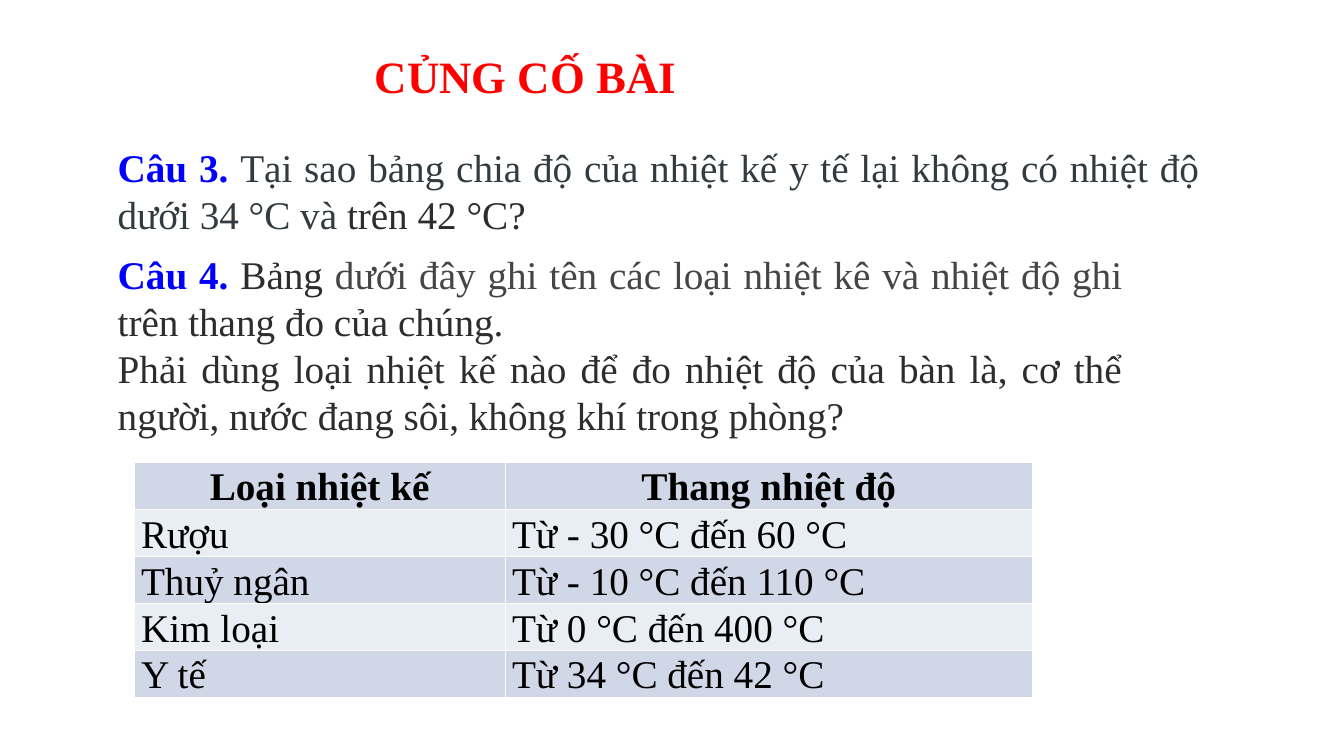
from lxml import etree
from pptx import Presentation
from pptx.dml.color import RGBColor
from pptx.enum.text import MSO_ANCHOR, PP_ALIGN
from pptx.oxml.ns import qn
from pptx.util import Pt

MID, TOP, LOW = MSO_ANCHOR.MIDDLE, MSO_ANCHOR.TOP, MSO_ANCHOR.BOTTOM
JUST, MIDDLE = PP_ALIGN.JUSTIFY, PP_ALIGN.CENTER
FONT, SIZE = "Times New Roman", 28
HEX = {"red": "FF0000", "blue": "0000FF", "dark": "2E2D2D", "gray": "464544",
       "slate": "323B40", "black": "000000", "white": "FFFFFF",
       "odd": "D0D8E8", "even": "E9EDF4"}

# Each paragraph is a list of (text, colour, bold).
TITLE = [[("CỦNG CỐ BÀI", "red", True)]]
ASK3 = [[
    ("Câu 3. ", "blue", True),
    ("Tại sao bảng chia độ của nhiệt kế y tế lại không có nhiệt độ dưới 34 °C và ",
     "slate", False),
    ("trên 42 °C?", "dark", False),
]]
ASK4 = [
    [("Câu 4. ", "blue", True),
     ("Bảng ", "dark", False),
     ("dưới đây ghi tên các loại nhiệt kê và nhiệt độ ghi ", "gray", False),
     ("trên thang đo của chúng.", "dark", False)],
    [("Phải dùng loại nhiệt kế nào để đo nhiệt độ của bàn là, cơ thể người, "
      "nước đang sôi, không khí trong phòng?", "dark", False)],
]
# (paragraphs, left, top, width, height, size, anchor)
BOXES = [
    (ASK4, 77, 174.2, 732, 143.3, SIZE, MID),
    (ASK3, 77, 98.6, 787, 75, SIZE, MID),
    (TITLE, 260.6, 31, 358.6, 62, 32, TOP),
]
ROWS = [
    ("Loại nhiệt kế", "Thang nhiệt độ"),
    ("Rượu", "Từ - 30 °C đến 60 °C"),
    ("Thuỷ ngân", "Từ - 10 °C đến 110 °C"),
    ("Kim loại", "Từ 0 °C đến 400 °C"),
    ("Y tế", "Từ 34 °C đến 42 °C"),
]
LEFT, UP, COLS, HIGH = 95.8, 330.5, (265, 376.6), 33.6


def style(run, color, bold, size=SIZE):
    font = run.font
    font.name, font.size, font.bold = FONT, Pt(size), bold
    font.color.rgb = RGBColor.from_string(HEX[color])


def add_text(slide, paras, left, top, width, height, size, anchor):
    box = slide.shapes.add_textbox(Pt(left), Pt(top), Pt(width), Pt(height))
    frame = box.text_frame
    frame.word_wrap, frame.vertical_anchor = True, anchor
    for i, parts in enumerate(paras):
        para = frame.add_paragraph() if i else frame.paragraphs[0]
        para.alignment = JUST
        for text, color, bold in parts:
            run = para.add_run()
            run.text = text
            style(run, color, bold, size)


def add_edges(cell):
    """Put a thin white line on each side, ahead of the fill in the XML."""
    props = cell._tc.get_or_add_tcPr()
    for i, side in enumerate(("lnL", "lnR", "lnT", "lnB")):
        line = etree.Element(qn("a:" + side), w=str(Pt(1)))
        fill = etree.SubElement(line, qn("a:solidFill"))
        etree.SubElement(fill, qn("a:srgbClr"), val=HEX["white"])
        props.insert(i, line)


def fill_cell(cell, text, row):
    head, last = row == 0, row == len(ROWS) - 1
    cell.margin_left = cell.margin_right = Pt(5)
    cell.margin_top = cell.margin_bottom = 0
    cell.vertical_anchor = TOP if head or last else LOW
    cell.fill.solid()
    cell.fill.fore_color.rgb = RGBColor.from_string(HEX["even" if row % 2 else "odd"])
    add_edges(cell)
    cell.text_frame.text = text
    para = cell.text_frame.paragraphs[0]
    para.alignment = MIDDLE if head else JUST
    para.line_spacing = 1.07
    style(para.runs[0], "black", head)


def add_grid(slide):
    table = slide.shapes.add_table(len(ROWS), len(COLS), Pt(LEFT), Pt(UP),
                                   Pt(sum(COLS)), Pt(HIGH * len(ROWS))).table
    for col, width in zip(table.columns, COLS):
        col.width = Pt(width)
    for r, words in enumerate(ROWS):
        table.rows[r].height = Pt(HIGH)
        for c, text in enumerate(words):
            fill_cell(table.cell(r, c), text, r)


def main():
    deck = Presentation()
    deck.slide_width, deck.slide_height = Pt(960), Pt(540)
    slide = deck.slides.add_slide(deck.slide_layouts[6])
    add_grid(slide)
    for box in BOXES:
        add_text(slide, *box)
    deck.save("out.pptx")


if __name__ == "__main__":
    main()
